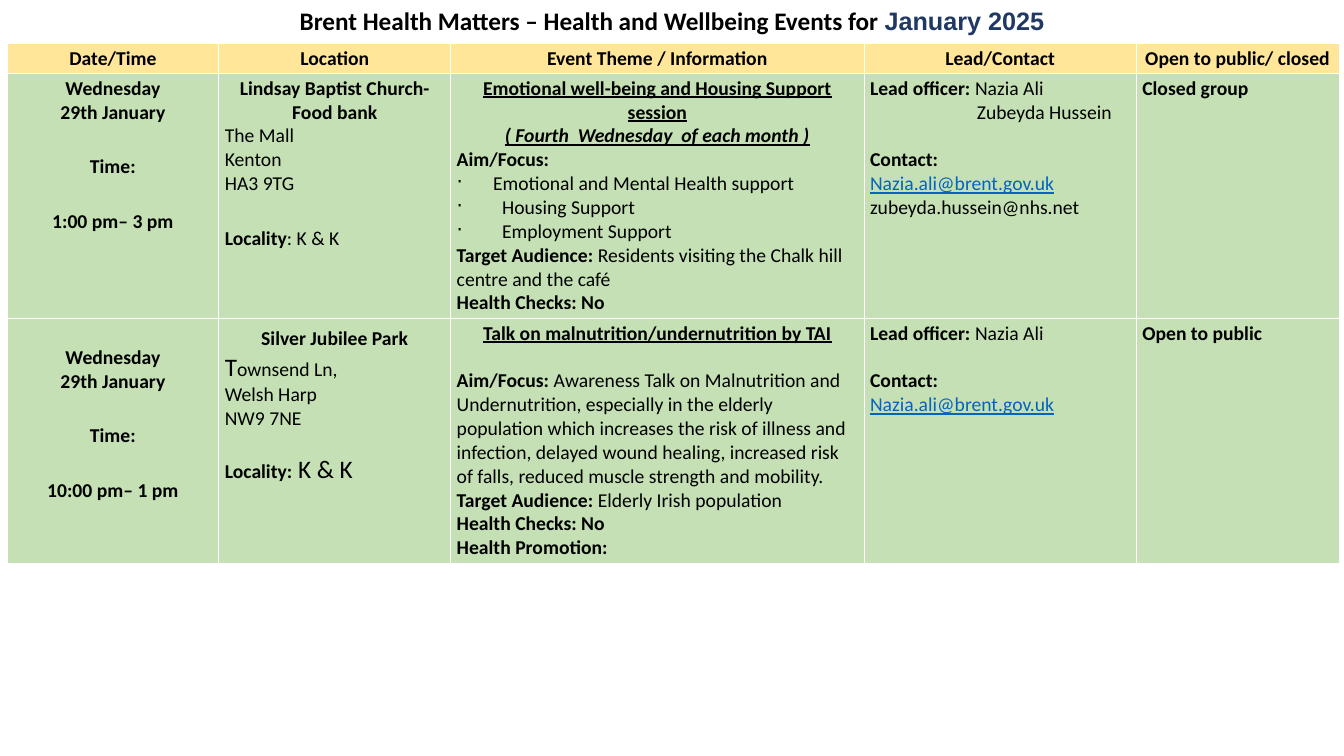
from dataclasses import dataclass, field

from lxml import etree
from pptx import Presentation
from pptx.dml.color import RGBColor
from pptx.enum.text import MSO_ANCHOR, MSO_AUTO_SIZE, PP_ALIGN
from pptx.oxml.ns import qn
from pptx.util import Inches, Pt

LEFT, CENTER = PP_ALIGN.LEFT, PP_ALIGN.CENTER
TOP, MIDDLE = MSO_ANCHOR.TOP, MSO_ANCHOR.MIDDLE
NO_FIT = MSO_AUTO_SIZE.NONE

BLACK, WHITE, NAVY, BLUE = "000000", "FFFFFF", "203864", "0563C1"
GOLD, GREEN = "FFE699", "C5E0B4"
BASE = {"name": "Calibri", "size": Pt(14), "bold": False}
BOLD = {"bold": True}
LARGE = {"size": Pt(18)}
THEME = {"bold": True, "underline": True}
NOTE = {**THEME, "italic": True}
LINK = {"underline": True}
SMALL_GAP, BIG_GAP = 17, 22
COLS = (2.1, 2.3, 4.1, 2.7, 2.01)
ROWS = (0.3, 2.43, 2.42)


@dataclass
class Run:
    text: str
    look: dict = field(default_factory=dict)
    color: str = BLACK


@dataclass
class Line:
    runs: list[Run]
    align: int = LEFT
    gap: float = 0
    indent: float = 0
    dot: bool = False


@dataclass
class Box:
    lines: list[Line]
    fill: str = GREEN
    anchor: int = TOP
    top: float = 0.03


def plain(text: str, **kw) -> Line:
    return Line([Run(text)], **kw)


def strong(text: str, **kw) -> Line:
    return Line([Run(text, BOLD)], **kw)


def pair(label: str, text: str, look: dict | None = None, **kw) -> Line:
    return Line([Run(label, BOLD), Run(text, look or {})], **kw)


def head(text: str) -> Box:
    return Box([strong(text, align=CENTER)], GOLD, MIDDLE)


def when(hours: str, top: float) -> Box:
    day = [strong(text, align=CENTER) for text in ("Wednesday", "29th January")]
    time = [strong(text, align=CENTER, gap=BIG_GAP) for text in ("Time:", hours)]
    return Box(day + time, top=top)


def lead(*others: Line) -> list[Line]:
    return [
        pair("Lead officer: ", "Nazia Ali"),
        *others,
        strong("Contact:", gap=SMALL_GAP),
        Line([Run("Nazia.ali@brent.gov.uk", LINK, BLUE)]),
    ]


GRID = [
    [head(text) for text in ("Date/Time", "Location", "Event Theme / Information",
                             "Lead/Contact", "Open to public/ closed")],
    [
        when("1:00 pm– 3 pm", 0.03),
        Box([
            strong("Lindsay Baptist Church-", align=CENTER),
            strong("Food bank", align=CENTER),
            plain("The Mall"),
            plain("Kenton"),
            plain("HA3 9TG"),
            pair("Locality", ": K & K", gap=BIG_GAP),
        ]),
        Box([
            Line([Run("Emotional well-being and Housing Support session", THEME)], CENTER),
            Line([Run("( Fourth  Wednesday  of each month )", NOTE)], CENTER),
            strong("Aim/Focus:"),
            plain("Emotional and Mental Health support", indent=0.36, dot=True),
            plain("Housing Support", indent=0.45, dot=True),
            plain("Employment Support", indent=0.45, dot=True),
            pair("Target Audience: ", "Residents visiting the Chalk hill centre and the café"),
            strong("Health Checks: No"),
        ]),
        Box(lead(plain("Zubeyda Hussein", indent=1.06)) + [plain("zubeyda.hussein@nhs.net")]),
        Box([strong("Closed group")]),
    ],
    [
        when("10:00 pm– 1 pm", 0.27),
        Box([
            strong("Silver Jubilee Park", align=CENTER),
            Line([Run("T", LARGE), Run("ownsend Ln,")], gap=1.5),
            plain("Welsh Harp"),
            plain("NW9 7NE"),
            pair("Locality:", " K & K", LARGE, gap=SMALL_GAP),
        ], top=0.08),
        Box([
            Line([Run("Talk on malnutrition/undernutrition by TAI", THEME)], CENTER),
            pair("Aim/Focus: ", "Awareness Talk on Malnutrition and Undernutrition, "
                 "especially in the elderly population which increases the risk of illness "
                 "and infection, delayed wound healing, increased risk of falls, reduced "
                 "muscle strength and mobility.", gap=SMALL_GAP),
            pair("Target Audience: ", "Elderly Irish population"),
            strong("Health Checks: No"),
            strong("Health Promotion:"),
        ]),
        Box(lead()),
        Box([strong("Open to public")]),
    ],
]


def paint(fill, color: str) -> None:
    fill.solid()
    fill.fore_color.rgb = RGBColor.from_string(color)


def write(frame, lines: list[Line]) -> None:
    for i, line in enumerate(lines):
        para = frame.add_paragraph() if i else frame.paragraphs[0]
        form = {"alignment": line.align, "space_before": Pt(line.gap),
                "space_after": Pt(0), "line_spacing": 1.0}
        for key, value in form.items():
            setattr(para, key, value)
        if line.indent:
            props = para._p.get_or_add_pPr()
            props.set("marL", str(Inches(line.indent)))
            props.set("indent", str(-Inches(line.indent) if line.dot else 0))
            if line.dot:
                etree.SubElement(props, qn("a:buChar"), char="·")
        for part in line.runs:
            run = para.add_run()
            run.text = part.text
            for key, value in {**BASE, **part.look}.items():
                setattr(run.font, key, value)
            paint(run.font.fill, part.color)


def edge(cell) -> None:
    props = cell._tc.get_or_add_tcPr()
    for side in ("lnL", "lnR", "lnT", "lnB"):
        line = etree.SubElement(props, qn(f"a:{side}"), w=str(Pt(0.5)))
        fill = etree.SubElement(line, qn("a:solidFill"))
        etree.SubElement(fill, qn("a:srgbClr"), val=WHITE)


def draw_cell(cell, box: Box) -> None:
    form = {"margin_left": Inches(0.06), "margin_right": Inches(0.06),
            "margin_top": Inches(box.top), "margin_bottom": Inches(0.03),
            "vertical_anchor": box.anchor}
    for key, value in form.items():
        setattr(cell, key, value)
    edge(cell)
    paint(cell.fill, box.fill)
    write(cell.text_frame, box.lines)


def draw_table(slide) -> None:
    table = slide.shapes.add_table(
        len(ROWS), len(COLS), Inches(0.07), Inches(0.43),
        Inches(sum(COLS)), Inches(sum(ROWS))).table
    for col, width in zip(table.columns, COLS):
        col.width = Inches(width)
    for row, height, boxes in zip(table.rows, ROWS, GRID):
        row.height = Inches(height)
        for cell, box in zip(row.cells, boxes):
            draw_cell(cell, box)


def draw_title(slide) -> None:
    title = slide.shapes.title
    place = {"left": 0, "top": 0, "width": Inches(13.33), "height": Inches(0.61)}
    for key, value in place.items():
        setattr(title, key, value)
    frame = title.text_frame
    form = {"vertical_anchor": TOP, "word_wrap": True, "auto_size": NO_FIT}
    for key, value in form.items():
        setattr(frame, key, value)
    look = {**BOLD, **LARGE}
    write(frame, [Line([
        Run("Brent Health Matters – Health and Wellbeing Events for ", look),
        Run("January 2025", {**look, "name": "Arial"}, NAVY),
    ], CENTER)])


def main() -> None:
    deck = Presentation()
    deck.slide_width, deck.slide_height = Inches(13.33), Inches(7.5)
    slide = deck.slides.add_slide(deck.slide_layouts[5])
    draw_title(slide)
    draw_table(slide)
    deck.save("out.pptx")


if __name__ == "__main__":
    main()
